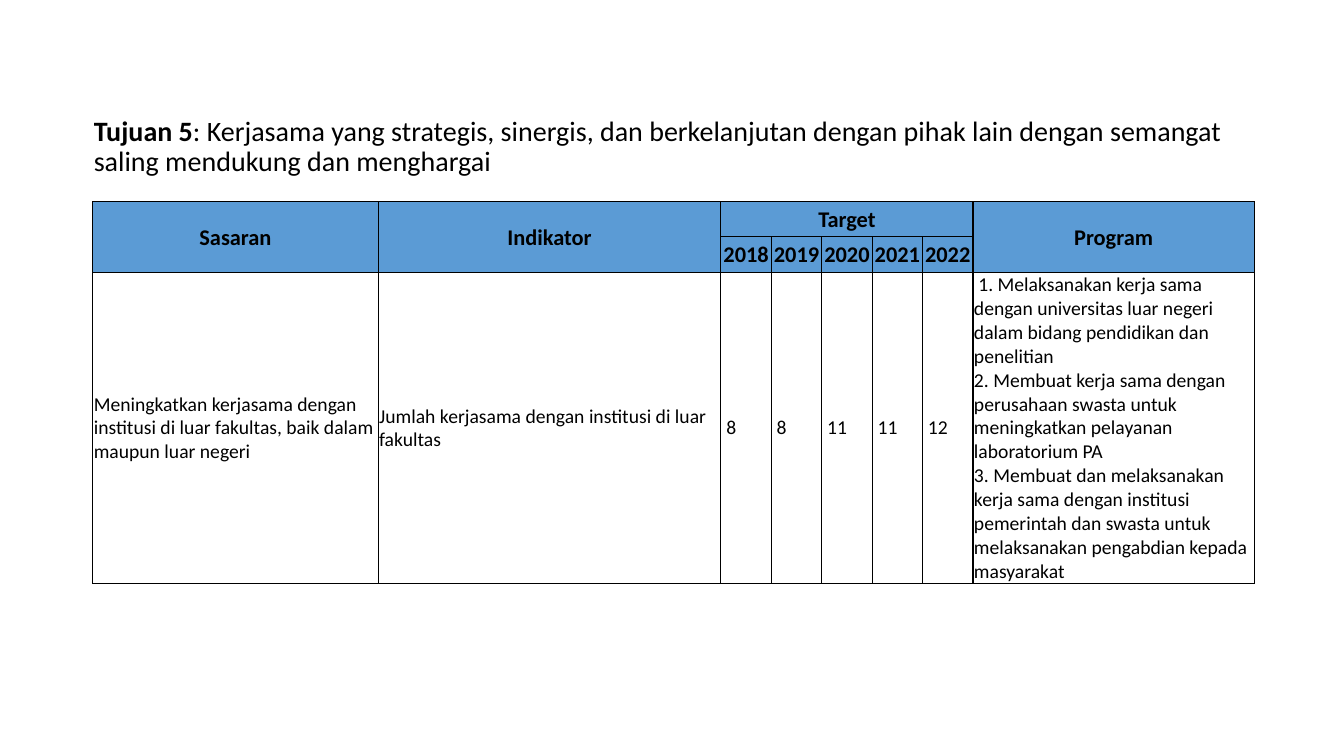
from pptx import Presentation
from pptx.dml.color import RGBColor
from pptx.enum.text import MSO_ANCHOR as Anchor, MSO_AUTO_SIZE as Auto, PP_ALIGN as Align
from pptx.oxml import parse_xml
from pptx.oxml.ns import nsdecls
from pptx.util import Inches, Pt

BLACK = RGBColor(0x00, 0x00, 0x00)
BLUE = RGBColor(0x5B, 0x9B, 0xD5)

WIDTHS = [2.83, 3.4] + [0.5] * 5 + [2.79]
HEIGHTS = [0.35, 0.35, 3.08]
YEARS = ["2018", "2019", "2020", "2021", "2022"]
ROWS = [
    ["Sasaran", "Indikator", "Target", "", "", "", "", "Program"],
    ["", ""] + YEARS + [""],
    [
        "Meningkatkan kerjasama dengan institusi di luar fakultas, baik dalam maupun luar negeri",
        "Jumlah kerjasama dengan institusi di luar fakultas",
        " 8", " 8", " 11", " 11", " 12",
        " 1. Melaksanakan kerja sama dengan universitas luar negeri dalam bidang pendidikan dan penelitian\n"
        "2. Membuat kerja sama dengan perusahaan swasta untuk meningkatkan pelayanan laboratorium PA\n"
        "3. Membuat dan melaksanakan kerja sama dengan institusi pemerintah dan swasta "
        "untuk melaksanakan pengabdian kepada masyarakat",
    ],
]
MERGES = [(0, 0, 1, 0), (0, 1, 1, 1), (0, 2, 0, 6), (0, 7, 1, 7)]
INSETS = {
    "margin_left": Inches(0.01),
    "margin_right": Inches(0.01),
    "margin_top": Inches(0.01),
    "margin_bottom": 0,
}


def style(font, size, bold):
    form = {"name": "Calibri", "size": Pt(size), "bold": bold}
    for key, val in form.items():
        setattr(font, key, val)
    font.color.rgb = BLACK


def border(cell):
    props = cell._tc.get_or_add_tcPr()
    for side in ("lnL", "lnR", "lnT", "lnB"):
        props.append(parse_xml(
            f'<a:{side} {nsdecls("a")} w="12700"><a:solidFill>'
            f'<a:srgbClr val="{BLACK}"/></a:solidFill></a:{side}>'))


deck = Presentation()
deck.slide_width = Inches(13.33)
deck.slide_height = Inches(7.5)
slide = deck.slides.add_slide(deck.slide_layouts[5])

title = slide.shapes.title
title.left, title.top = Inches(0.83), Inches(1.11)
title.width, title.height = Inches(11.58), Inches(0.71)
frame = title.text_frame
frame.auto_size = Auto.NONE
frame.word_wrap = True
frame.vertical_anchor = Anchor.MIDDLE
para = frame.paragraphs[0]
para.alignment = Align.LEFT
para.line_spacing = 0.9
for text, bold in [
    ("Tujuan 5", True),
    (": Kerjasama yang strategis, sinergis, dan berkelanjutan dengan pihak lain "
     "dengan semangat saling mendukung dan menghargai", False),
]:
    run = para.add_run()
    run.text = text
    style(run.font, 20, bold)

table = slide.shapes.add_table(
    len(ROWS), len(WIDTHS), Inches(0.92), Inches(2),
    Inches(sum(WIDTHS)), Inches(sum(HEIGHTS))).table
for col, width in zip(table.columns, WIDTHS):
    col.width = Inches(width)
for row, height in zip(table.rows, HEIGHTS):
    row.height = Inches(height)

for r, texts in enumerate(ROWS):
    head = r < 2
    for c, text in enumerate(texts):
        cell = table.cell(r, c)
        cell.text = text
        for key, val in INSETS.items():
            setattr(cell, key, val)
        last = not head and c == len(WIDTHS) - 1
        cell.vertical_anchor = Anchor.BOTTOM if last else Anchor.MIDDLE
        border(cell)
        if head:
            cell.fill.solid()
            cell.fill.fore_color.rgb = BLUE
        else:
            cell.fill.background()
        for para in cell.text_frame.paragraphs:
            para.alignment = Align.CENTER if head else Align.LEFT
            style(para.font, 16 if head else 14, head)
            for run in para.runs:
                style(run.font, 16 if head else 14, head)

for top, left, low, right in MERGES:
    table.cell(top, left).merge(table.cell(low, right))

deck.save("out.pptx")
